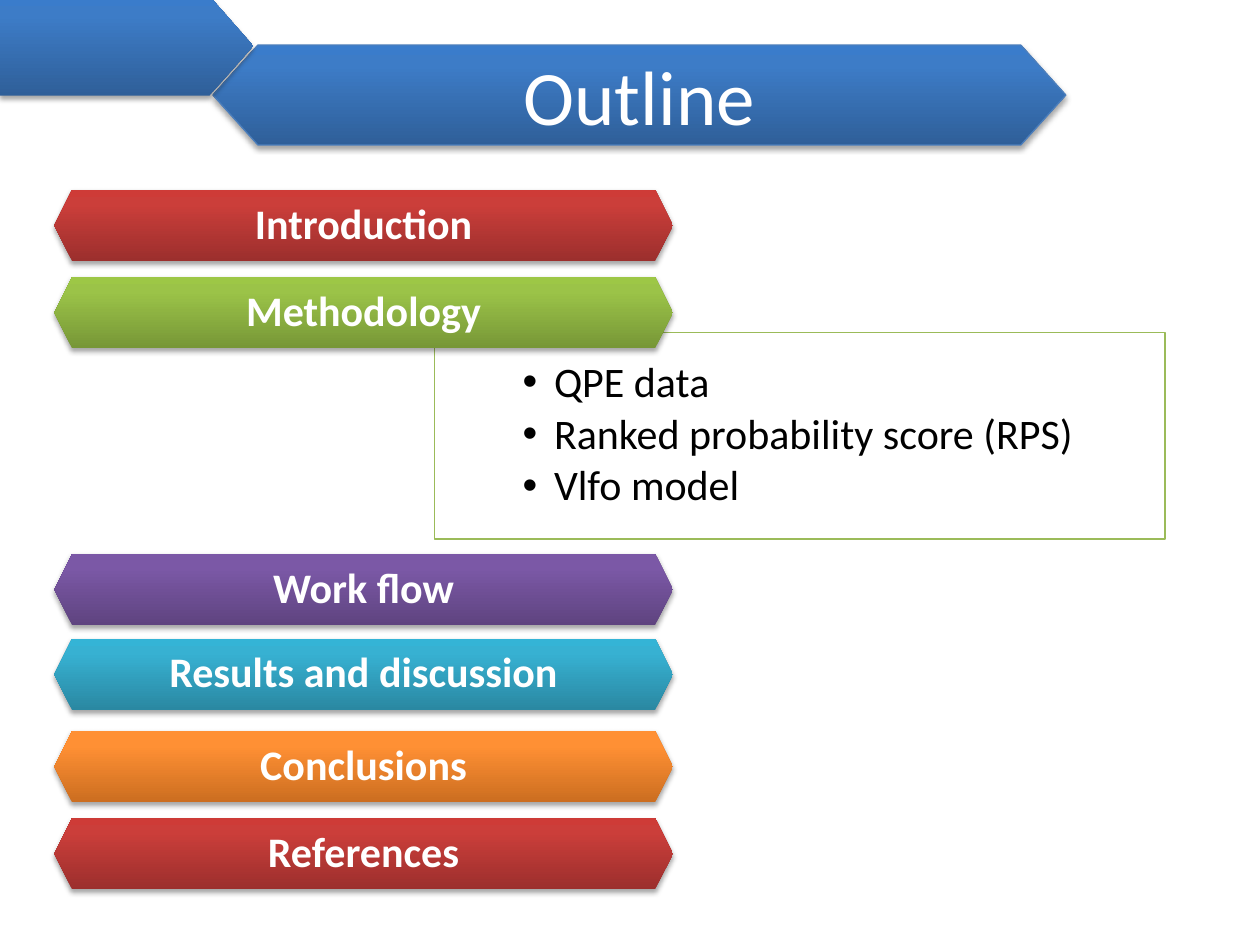
from collections import namedtuple
from copy import deepcopy
from dataclasses import dataclass

from lxml import etree
from pptx import Presentation
from pptx.dml.color import RGBColor
from pptx.enum import shapes, text
from pptx.oxml.ns import qn
from pptx.util import Pt

Box = namedtuple("Box", "x y w h")


@dataclass(frozen=True)
class Theme:
    font: str = "Calibri"
    title_size: float = 44
    body_size: float = 24
    white: str = "FFFFFF"
    black: str = "000000"
    title_line: str = "4B7EBC"
    detail_line: str = "9BBB59"
    blue: tuple = ("2F5F99", "3D7CC7", "3A7CCB")
    red: tuple = ("9C2F2D", "CB3E3A", "CE3B37")
    green: tuple = ("779737", "9BC348", "9DC746")
    purple: tuple = ("5F4480", "7B58A6", "7C57A8")
    teal: tuple = ("2A88A2", "37B1D2", "34B4D6")
    orange: tuple = ("CC6E20", "FF9034", "FF9136")


THEME = Theme()


def rgb(value):
    return RGBColor.from_string(value)


def add_shape(slide, kind, box, line=None):
    sp = slide.shapes.add_shape(kind, *(Pt(v) for v in box))
    sp.shadow.inherit = False
    if line:
        sp.line.color.rgb = rgb(line)
        sp.line.width = Pt(0.75)
    else:
        sp.line.fill.background()
    return sp


def fill_gradient(sp, colors):
    sp.fill.gradient()
    sp.fill.gradient_angle = 90
    stop_list = sp.element.spPr.find(".//" + qn("a:gsLst"))
    stop_list.append(deepcopy(stop_list[-1]))
    for stop, position, color in zip(sp.fill.gradient_stops, (0, 0.8, 1), colors):
        stop.position = position
        stop.color.rgb = rgb(color)


def cast_shadow(sp):
    effects = sp.element.spPr.find(qn("a:effectLst"))
    shadow = etree.SubElement(
        effects, qn("a:outerShdw"), blurRad=str(Pt(3.1)), dist=str(Pt(1.8)),
        dir="5400000", rotWithShape="0")
    color = etree.SubElement(shadow, qn("a:srgbClr"), val=THEME.black)
    etree.SubElement(color, qn("a:alpha"), val="35000")


def add_ribbon(slide, kind, box, colors, line=None):
    sp = add_shape(slide, kind, box, line)
    fill_gradient(sp, colors)
    cast_shadow(sp)
    return sp


def add_run(p, content, size, color, bold=False):
    r = p.add_run()
    r.text = content
    r.font.name = THEME.font
    r.font.size = Pt(size)
    r.font.bold = bold
    r.font.color.rgb = rgb(color)


def add_label(sp, content, size, bold=False):
    tf = sp.text_frame
    tf.word_wrap = True
    tf.vertical_anchor = text.MSO_ANCHOR.MIDDLE
    tf.margin_top = tf.margin_bottom = 0
    p = tf.paragraphs[0]
    p.alignment = text.PP_ALIGN.CENTER
    add_run(p, content, size, THEME.white, bold)
    return p


def add_bullet(p):
    props = p._p.get_or_add_pPr()
    props.set("marL", str(Pt(18)))
    props.set("indent", str(-Pt(18)))
    etree.SubElement(props, qn("a:buFont"), typeface="Arial")
    etree.SubElement(props, qn("a:buChar"), char="•")


def add_header(slide, box, title):
    banner_box = Box(box.x + 121.7, box.y + 28, 487.4, box.h - 28)
    banner = add_ribbon(slide, shapes.MSO_SHAPE.HEXAGON, banner_box,
                        THEME.blue, THEME.title_line)
    banner.adjustments[0] = 0.45
    add_label(banner, title, THEME.title_size)
    tab = add_ribbon(slide, shapes.MSO_SHAPE.PENTAGON,
                     Box(box.x, box.y, 144.7, 56.9), THEME.blue)
    tab.adjustments[0] = 0.44


def add_section(slide, box, title, colors):
    bar = add_ribbon(slide, shapes.MSO_SHAPE.HEXAGON, box, colors)
    p = add_label(bar, title, THEME.body_size, True)
    p.line_spacing = 0.9


def add_details(slide, box, items):
    panel = add_shape(slide, shapes.MSO_SHAPE.RECTANGLE, box, THEME.detail_line)
    panel.fill.solid()
    panel.fill.fore_color.rgb = rgb(THEME.white)
    tf = panel.text_frame
    tf.word_wrap = True
    tf.vertical_anchor = text.MSO_ANCHOR.TOP
    tf.margin_left = tf.margin_right = Pt(50.4)
    tf.margin_top, tf.margin_bottom = Pt(16.5), Pt(13.7)
    for i, item in enumerate(items):
        p = tf.add_paragraph() if i else tf.paragraphs[0]
        p.level = 1
        p.alignment = text.PP_ALIGN.LEFT
        p.line_spacing = 0.9
        p.space_after = Pt(0.15 * THEME.body_size)
        add_bullet(p)
        add_run(p, item, THEME.body_size, THEME.black)


def add_outline(slide, box, sections, details):
    add_details(slide, Box(box.x + 217.2, box.y + 81.4, 417.6, 118.1), details)
    for offset, title, colors in sections:
        add_section(slide, Box(box.x, box.y + offset, 353.5, 40.5), title, colors)


def main():
    prs = Presentation()
    prs.slide_width, prs.slide_height = Pt(720), Pt(540)
    slide = prs.slides.add_slide(prs.slide_layouts[6])
    sections = (
        (0, "Introduction", THEME.red),
        (49.8, "Methodology", THEME.green),
        (208, "Work flow", THEME.purple),
        (256.5, "Results and discussion", THEME.teal),
        (309.2, "Conclusions", THEME.orange),
        (359, "References", THEME.red),
    )
    details = ("QPE data", "Ranked probability score (RPS)", "Vlfo model")
    add_outline(slide, Box(31, 108.6, 634.8, 399.5), sections, details)
    add_header(slide, Box(0, -2.2, 609.1, 85.1), "Outline")
    prs.save("out.pptx")


if __name__ == "__main__":
    main()
